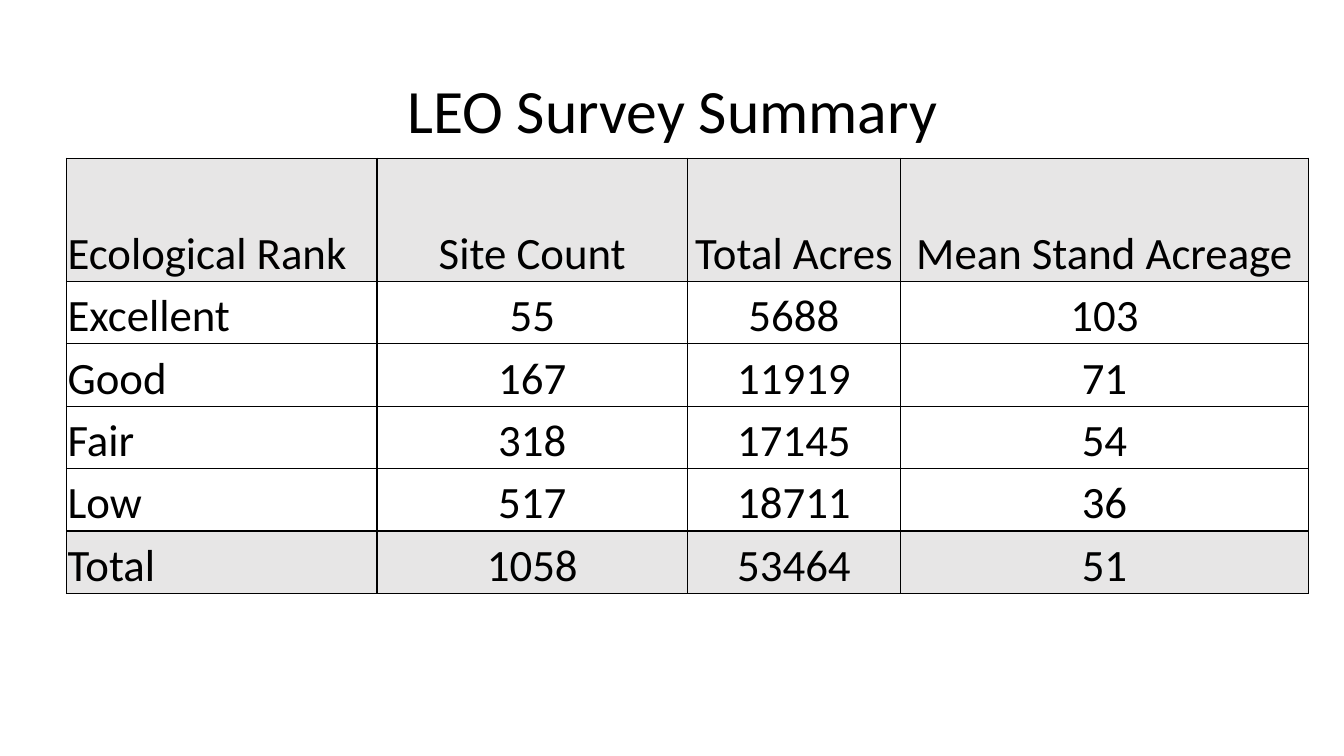
from dataclasses import dataclass

from lxml import etree
from pptx import Presentation
from pptx import util as u
from pptx.dml.color import RGBColor
from pptx.enum import text
from pptx.oxml import ns


@dataclass(frozen=True)
class Theme:
    font: str = "Calibri"
    ink: str = "000000"
    band: str = "E7E6E6"
    title_size: int = 44
    table_size: int = 32
    border_width: int = 1


THEME = Theme()

SURVEY = [
    ("Ecological Rank", "Site Count", "Total Acres", "Mean Stand Acreage"),
    ("Excellent", "55", "5688", "103"),
    ("Good", "167", "11919", "71"),
    ("Fair", "318", "17145", "54"),
    ("Low", "517", "18711", "36"),
    ("Total", "1058", "53464", "51"),
]
COLUMN_WIDTHS = (3.08, 3.08, 2.11, 4.05)
HEADER_HEIGHT, ROW_HEIGHT = 1.22, 0.62


def write(frame, wording, size, alignment):
    frame.text = wording
    paragraph = frame.paragraphs[0]
    paragraph.alignment = alignment
    font = paragraph.runs[0].font
    font.name = THEME.font
    font.size = u.Pt(size)
    font.color.rgb = RGBColor.from_string(THEME.ink)
    return paragraph


def add_title(slide, wording, left, top, width, height):
    title = slide.shapes.add_textbox(*map(u.Inches, (left, top, width, height)))
    frame = title.text_frame
    frame.word_wrap = True
    frame.vertical_anchor = text.MSO_ANCHOR.MIDDLE
    heading = write(frame, wording, THEME.title_size, text.PP_ALIGN.CENTER)
    heading.line_spacing = 0.9


def add_borders(cell):
    """Rule all four sides; call before filling, as the schema puts lines first."""
    properties = cell._tc.get_or_add_tcPr()
    for side in ("lnL", "lnR", "lnT", "lnB"):
        line = etree.SubElement(properties, ns.qn(f"a:{side}"),
                                w=str(u.Pt(THEME.border_width)))
        fill = etree.SubElement(line, ns.qn("a:solidFill"))
        etree.SubElement(fill, ns.qn("a:srgbClr"), val=THEME.ink)


def style_cell(cell, wording, is_label, is_band):
    cell.margin_left = cell.margin_right = cell.margin_top = u.Inches(0.01)
    cell.margin_bottom = 0
    cell.vertical_anchor = text.MSO_ANCHOR.BOTTOM
    alignment = text.PP_ALIGN.LEFT if is_label else text.PP_ALIGN.CENTER
    write(cell.text_frame, wording, THEME.table_size, alignment)
    add_borders(cell)
    if is_band:
        cell.fill.solid()
        cell.fill.fore_color.rgb = RGBColor.from_string(THEME.band)
    else:
        cell.fill.background()


def add_survey_table(slide, left, top):
    last = len(SURVEY) - 1
    heights = [HEADER_HEIGHT] + [ROW_HEIGHT] * last
    box = (left, top, sum(COLUMN_WIDTHS), sum(heights))
    table = slide.shapes.add_table(
        len(SURVEY), len(COLUMN_WIDTHS), *map(u.Inches, box)).table
    table.first_row = table.horz_banding = False
    for column, width in zip(table.columns, COLUMN_WIDTHS):
        column.width = u.Inches(width)
    for r, (row, height, entries) in enumerate(zip(table.rows, heights, SURVEY)):
        row.height = u.Inches(height)
        for c, entry in enumerate(entries):
            style_cell(table.cell(r, c), entry, c == 0, r in (0, last))


def main():
    deck = Presentation()
    deck.slide_width, deck.slide_height = u.Inches(13.33), u.Inches(7.5)
    slide = deck.slides.add_slide(deck.slide_layouts[6])
    add_title(slide, "LEO Survey Summary", 0.92, 0.4, 11.5, 1.45)
    add_survey_table(slide, 0.66, 1.57)
    deck.save("out.pptx")


if __name__ == "__main__":
    main()
